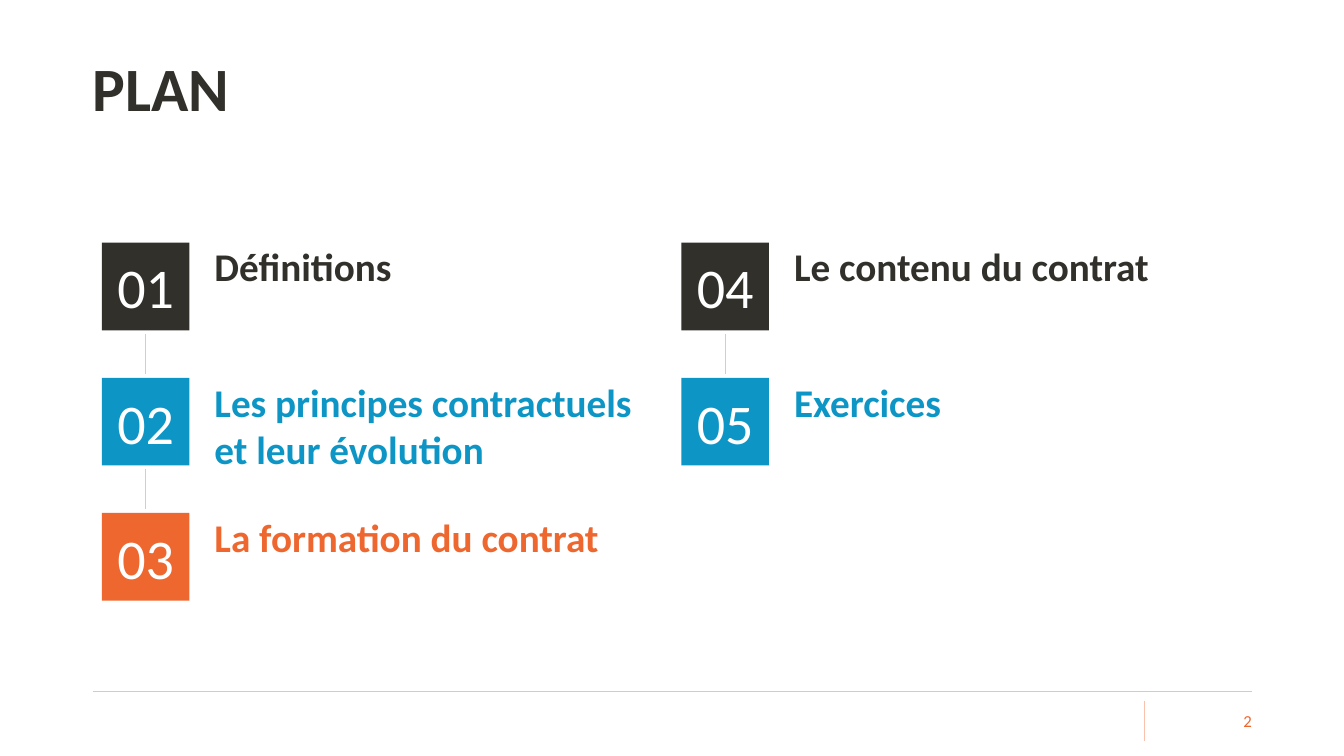
import pptx
import pptx.util
import pptx.dml.color
import pptx.enum.shapes
import pptx.enum.text
import pptx.oxml.ns
from lxml import etree

Pt = pptx.util.Pt
ALIGN = pptx.enum.text.PP_ALIGN
ANCHOR = pptx.enum.text.MSO_ANCHOR

# Content: one list of chapters per column
TITLE = "PLAN"
PAGE_NUMBER = "2"
COLUMNS = [
    ["Définitions", "Les principes contractuels et leur évolution", "La formation du contrat"],
    ["Le contenu du contrat", "Exercices"],
]

THEME = {
    "font": "Calibri",
    "dark": "31302B", "blue": "0D96C5", "orange": "EE672F", "white": "FFFFFF",
    "link": "D0CECE", "rule": "CECDC7", "divider": "F8C2AC",
    "title": 44, "number": 40, "chapter": 28, "page": 12, "line": 0.5,
}
ROW_COLORS = ["dark", "blue", "orange"]

# Grid, in points
GRID_LEFT, GRID_TOP = 72.75, 173.4
COLUMN_STEP, ROW_STEP = 414, 96.5
SQUARE = 62.6
CHAPTER_OFFSET, CHAPTER_WIDTH, LINE_HEIGHT = 73.4, 332, 33.8
LINK_GAP = 2.7
MARGIN_LEFT, MARGIN_RIGHT = 66.25, 894.25


def color(name):
    return pptx.dml.color.RGBColor.from_string(THEME[name])


def write(shape, text, size, ink, bold=False, align=ALIGN.LEFT, anchor=ANCHOR.MIDDLE,
          insets=(7.2, 3.6, 7.2, 3.6), spacing=None):
    frame = shape.text_frame
    frame.word_wrap = True
    frame.vertical_anchor = anchor
    frame.margin_left, frame.margin_top, frame.margin_right, frame.margin_bottom = map(Pt, insets)
    paragraph = frame.paragraphs[0]
    paragraph.alignment = align
    if spacing:
        paragraph.line_spacing = spacing
    run = paragraph.add_run()
    run.text = text
    run.font.name = THEME["font"]
    run.font.size = Pt(THEME[size])
    run.font.bold = bold
    run.font.color.rgb = color(ink)


def text_box(left, top, width, height):
    return slide.shapes.add_textbox(Pt(left), Pt(top), Pt(width), Pt(height))


def draw_line(x1, y1, x2, y2, ink):
    line = slide.shapes.add_connector(
        pptx.enum.shapes.MSO_CONNECTOR.STRAIGHT, Pt(x1), Pt(y1), Pt(x2), Pt(y2))
    line.line.color.rgb = color(ink)
    line.line.width = Pt(THEME["line"])
    etree.SubElement(line._element.spPr, pptx.oxml.ns.qn("a:effectLst"))


presentation = pptx.Presentation()
presentation.slide_width, presentation.slide_height = Pt(960), Pt(540)
slide = presentation.slides.add_slide(presentation.slide_layouts[6])

# Title
write(text_box(MARGIN_LEFT, 13, 754, 104.4), TITLE, "title", "dark", bold=True,
      insets=(0, 3.6, 7.2, 3.6), spacing=0.9)

# Numbered chapters, linked down each column
number = 0
for column, chapters in enumerate(COLUMNS):
    left = GRID_LEFT + column * COLUMN_STEP
    for row, chapter in enumerate(chapters):
        number += 1
        top = GRID_TOP + row * ROW_STEP
        ink = ROW_COLORS[row]
        square = slide.shapes.add_shape(
            pptx.enum.shapes.MSO_SHAPE.RECTANGLE, Pt(left), Pt(top), Pt(SQUARE), Pt(SQUARE))
        square.shadow.inherit = False
        square.fill.solid()
        square.fill.fore_color.rgb = color(ink)
        square.line.fill.background()
        write(square, f"{number:02d}", "number", "white", align=ALIGN.CENTER)

        lines = 2 if len(chapter) > 30 else 1
        label = text_box(left + CHAPTER_OFFSET, top, CHAPTER_WIDTH, lines * LINE_HEIGHT)
        write(label, chapter, "chapter", ink, bold=True, anchor=ANCHOR.TOP,
              insets=(7.2, 0, 7.2, 0))

        if row < len(chapters) - 1:
            middle = left + SQUARE / 2
            draw_line(middle, top + SQUARE + LINK_GAP, middle, top + ROW_STEP - LINK_GAP, "link")

# Footer
draw_line(MARGIN_LEFT, 493.9, MARGIN_RIGHT, 493.9, "rule")
draw_line(817.2, 500.4, 817.2, 529.2, "divider")
write(text_box(825.85, 500.4, 68.4, 28.8), PAGE_NUMBER, "page", "orange", align=ALIGN.RIGHT,
      insets=(0, 3.6, 0, 3.6))

presentation.save("out.pptx")
